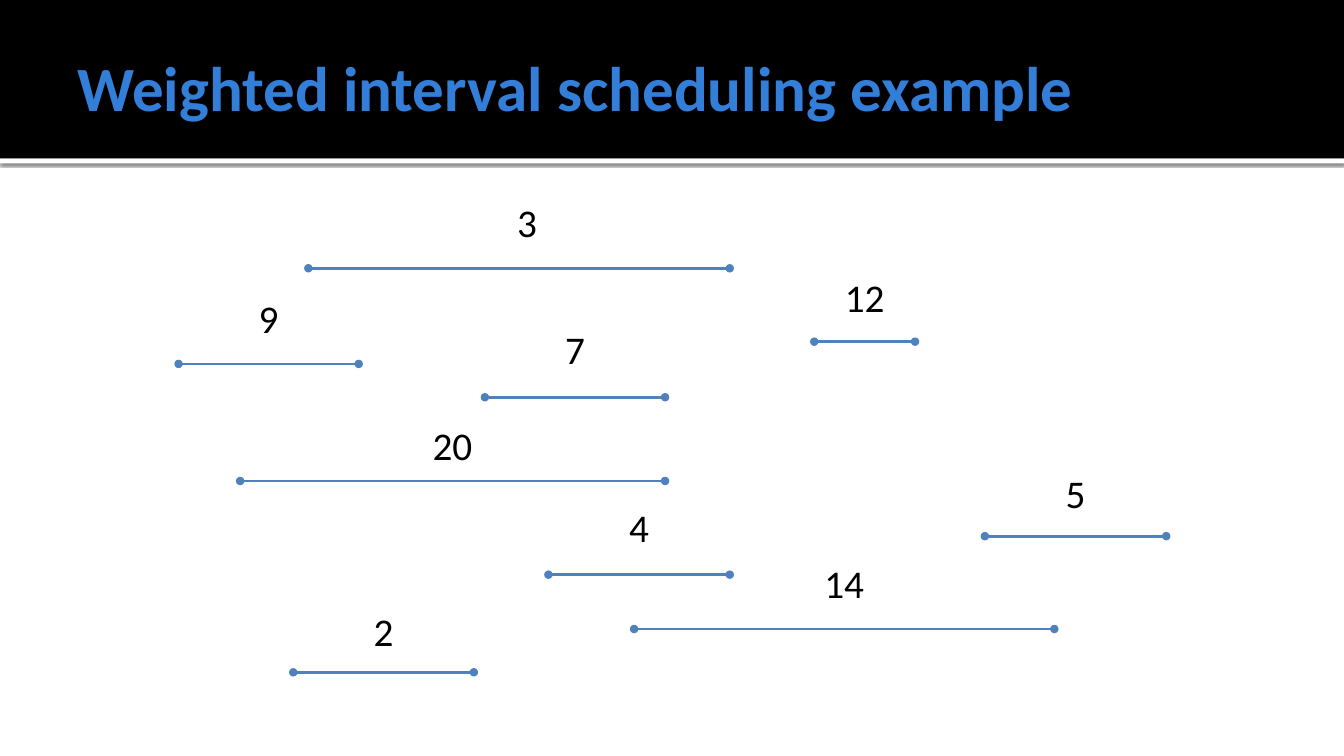
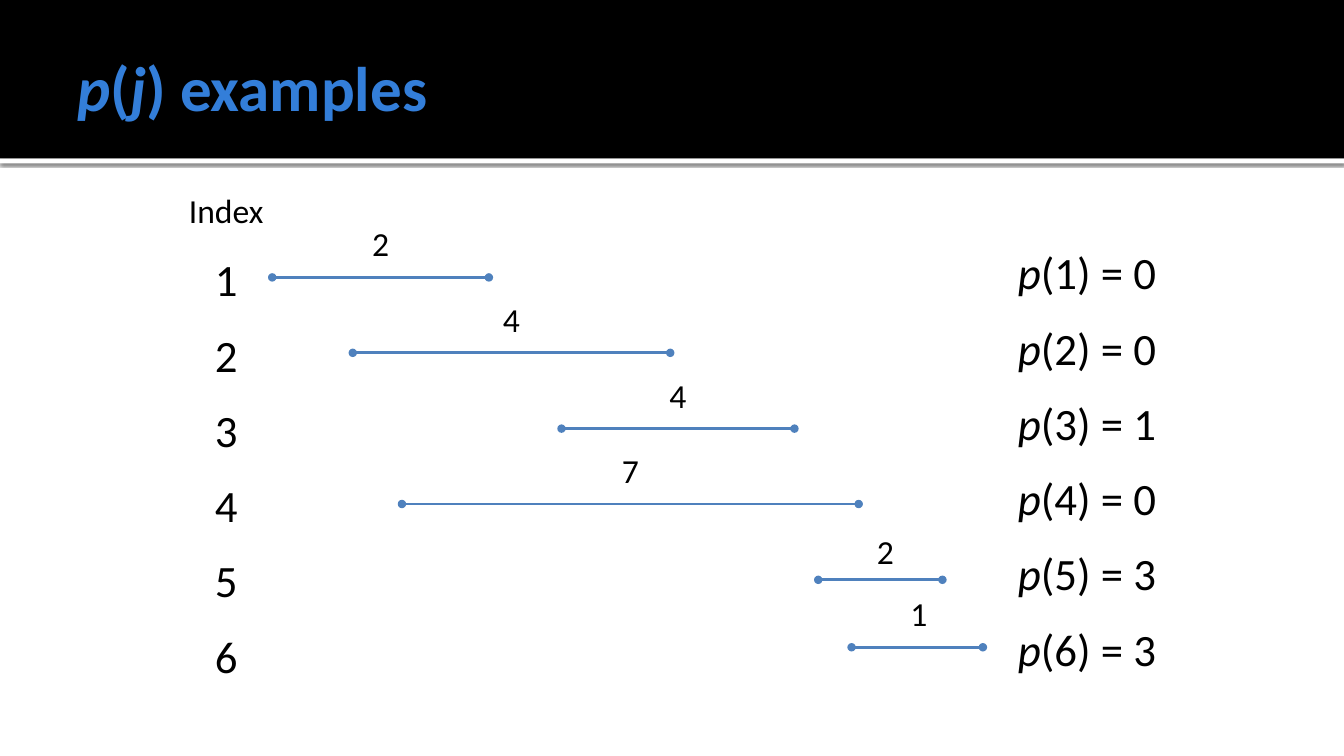
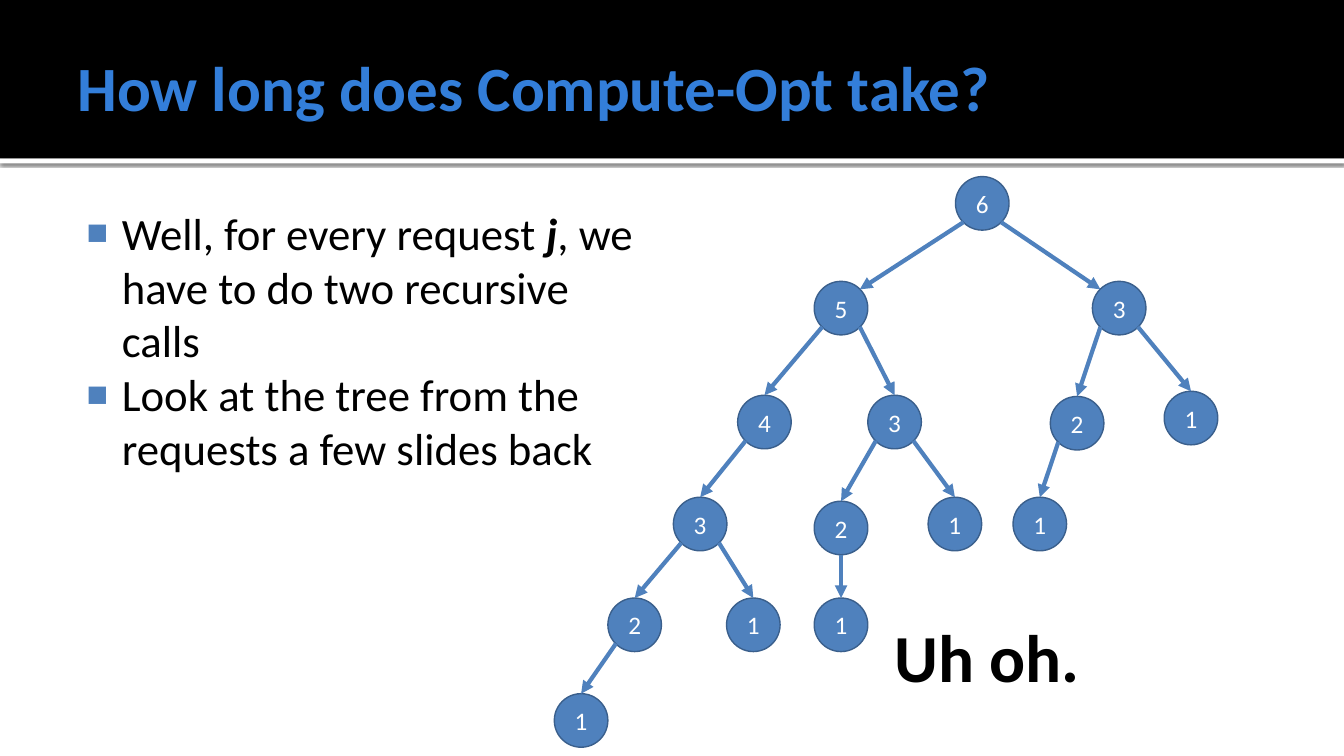
from dataclasses import dataclass

from lxml.etree import SubElement
from pptx import Presentation
from pptx.dml.color import RGBColor
from pptx.enum.shapes import MSO_CONNECTOR, MSO_SHAPE
from pptx.enum.text import MSO_ANCHOR, MSO_AUTO_SIZE, PP_ALIGN
from pptx.oxml.ns import qn
from pptx.util import Cm, Pt


@dataclass(frozen=True)
class Theme:
    font: str = "Calibri"
    black: str = "000000"
    white: str = "FFFFFF"
    title_blue: str = "337ED9"
    blue: str = "4F81BD"
    node_outline: str = "3A5F8C"
    title_size: int = 45
    remark_size: int = 48
    body_size: int = 32
    weight_size: int = 28
    small_size: int = 24
    node_size: int = 18
    interval_width: int = 2
    arrow_width: int = 3


@dataclass(frozen=True)
class Box:
    """A region in centimetres."""
    left: float
    top: float
    width: float
    height: float

    def lengths(self):
        return Cm(self.left), Cm(self.top), Cm(self.width), Cm(self.height)


@dataclass(frozen=True)
class Interval:
    """A weighted interval, in centimetres from its region's corner."""
    weight: str
    start: float
    end: float
    y: float
    rise: float
    shift: float = 0


@dataclass(frozen=True)
class Node:
    """A call in the recursion tree, in centimetres from the tree's corner."""
    label: str
    x: float
    y: float
    children: tuple = ()


THEME = Theme()
SLIDE_WIDTH, SLIDE_HEIGHT = 33.87, 19.05
BAND_HEIGHT = 3.99
TITLE_BOX = Box(1.7, 0.43, 30.48, 3.48)
NODE_DIAMETER = 1.35
FAR_CHILD = 3
TITLE_ONLY, TITLE_AND_BODY = 5, 1

# Connection sites of an ellipse, as fractions of its width and height
SITES = {0: (0.5, 0), 1: (0.15, 0.15), 3: (0.15, 0.85),
         4: (0.5, 1), 5: (0.85, 0.85), 7: (0.85, 0.15)}

WEIGHTED_INTERVALS = (
    Interval("9", 0, 4.54, 4.37, 1.88),
    Interval("4", 9.32, 13.89, 9.68, 1.91),
    Interval("7", 7.72, 12.26, 5.21, 1.93),
    Interval("5", 20.32, 24.89, 8.71, 1.8),
    Interval("12", 16.02, 18.56, 3.81, 1.85),
    Interval("20", 1.55, 12.26, 7.32, 1.63),
    Interval("2", 2.89, 7.44, 12.14, 1.75),
    Interval("3", 3.27, 13.89, 1.96, 1.88, 0.2),
    Interval("14", 11.48, 22.07, 11.05, 1.88),
)
INDEXED_INTERVALS = (
    Interval("2", 0, 5.46, 1.99, 1.49),
    Interval("4", 2.03, 10.03, 3.89, 1.49),
    Interval("4", 7.29, 13.16, 5.8, 1.49),
    Interval("7", 3.27, 14.78, 7.7, 1.49),
    Interval("2", 13.76, 16.89, 9.61, 1.35, 0.13),
    Interval("1", 14.6, 17.91, 11.31, 1.5, 0.04),
)
PREDECESSORS = (0, 0, 1, 0, 3, 3)

CALL_TREE = Node("6", 10.11, 0, (
    Node("5", 6.55, 2.64, (
        Node("4", 4.62, 5.51, (
            Node("3", 3, 8.08, (
                Node("2", 1.35, 10.62, (Node("1", 0, 13.03),)),
                Node("1", 4.34, 10.62))),)),
        Node("3", 7.9, 5.51, (
            Node("2", 6.55, 8.18, (Node("1", 6.55, 10.62),)),
            Node("1", 9.42, 8.08))))),
    Node("3", 13.56, 2.64, (
        Node("2", 12.5, 5.54, (Node("1", 11.56, 8.08),)),
        Node("1", 15.37, 5.41)))))


def rgb(color):
    return RGBColor.from_string(color)


def write_runs(paragraph, runs, size, color=THEME.black, bold=False):
    """Add (text, style) runs; a style holds b for bold and i for italic."""
    for text, style in runs:
        run = paragraph.add_run()
        run.text = text
        font = run.font
        font.name, font.size = THEME.font, Pt(size)
        font.bold, font.italic = bold or "b" in style, "i" in style
        font.color.rgb = rgb(color)


def add_text(shapes, box, lines, size, align=PP_ALIGN.CENTER, bold=False, spacing=None):
    frame = shapes.add_textbox(*box.lengths()).text_frame
    frame.word_wrap = True
    frame.auto_size = MSO_AUTO_SIZE.SHAPE_TO_FIT_TEXT
    for number, runs in enumerate(lines):
        paragraph = frame.add_paragraph() if number else frame.paragraphs[0]
        paragraph.alignment = align
        if spacing:
            paragraph.line_spacing = spacing
        write_runs(paragraph, runs, size, bold=bold)
    return frame


def add_filled_shape(shapes, kind, box, color):
    shape = shapes.add_shape(kind, *box.lengths())
    shape.shadow.inherit = False
    shape.fill.solid()
    shape.fill.fore_color.rgb = rgb(color)
    shape.line.fill.background()
    return shape


def add_line(shapes, start, end, width, **ends):
    """Draw a line between two points in cm; ends gives headEnd and tailEnd types."""
    connector = shapes.add_connector(
        MSO_CONNECTOR.STRAIGHT, *(Cm(value) for value in (*start, *end)))
    connector.line.color.rgb = rgb(THEME.blue)
    connector.line.width = Pt(width)
    outline = connector.line._get_or_add_ln()
    for name, kind in ends.items():
        SubElement(outline, qn(f"a:{name}"), type=kind)
    SubElement(connector.element.spPr, qn("a:effectLst"))
    return connector


def add_master_bands(presentation, slide):
    """Draw the title bands on a slide, then move them to the master."""
    strip = add_filled_shape(slide.shapes, MSO_SHAPE.RECTANGLE,
                             Box(0, BAND_HEIGHT, SLIDE_WIDTH, 0.13), THEME.white)
    shadow = SubElement(strip.element.spPr.find(qn("a:effectLst")), qn("a:outerShdw"),
                        blurRad=str(Pt(2.5)), dist=str(Pt(0.8)), dir="5400000",
                        algn="t", rotWithShape="0")
    color = SubElement(shadow, qn("a:srgbClr"), val=THEME.black)
    SubElement(color, qn("a:alpha"), val="60000")
    band = add_filled_shape(slide.shapes, MSO_SHAPE.RECTANGLE,
                            Box(0, 0, SLIDE_WIDTH, BAND_HEIGHT), THEME.black)
    master_tree = presentation.slide_master.shapes.element
    for number, shape in enumerate((strip, band)):
        shape.element.find(".//" + qn("p:cNvPr")).set("id", str(101 + number))
        master_tree.insert(2 + number, shape.element)


def place_placeholder(placeholder, box, insets):
    placeholder.left, placeholder.top, placeholder.width, placeholder.height = box.lengths()
    frame = placeholder.text_frame
    frame.auto_size = MSO_AUTO_SIZE.NONE
    frame.word_wrap = True
    (frame.margin_left, frame.margin_top,
     frame.margin_right, frame.margin_bottom) = (Cm(inset) for inset in insets)
    return frame


def add_titled_slide(presentation, layout, title_runs):
    slide = presentation.slides.add_slide(presentation.slide_layouts[layout])
    frame = place_placeholder(slide.shapes.title, TITLE_BOX, (0.25, 0.13, 0.13, 0.13))
    frame.vertical_anchor = MSO_ANCHOR.MIDDLE
    paragraph = frame.paragraphs[0]
    paragraph.alignment = PP_ALIGN.LEFT
    write_runs(paragraph, title_runs, THEME.title_size, THEME.title_blue, bold=True)
    return slide


def add_intervals(slide, box, intervals, label_width, label_height, size):
    shapes = slide.shapes.add_group_shape().shapes
    for interval in intervals:
        y = box.top + interval.y
        start, end = box.left + interval.start, box.left + interval.end
        add_line(shapes, (start, y), (end, y), THEME.interval_width,
                 headEnd="oval", tailEnd="oval")
        label_left = (start + end - label_width) / 2 + interval.shift
        label_box = Box(label_left, y - interval.rise, label_width, label_height)
        add_text(shapes, label_box, [[(interval.weight, "")]], size)


def add_index_column(slide, box, count):
    lines = [[(str(index), "")] for index in range(1, count + 1)]
    frame = add_text(slide.shapes, box, [[("Index", "")], *lines],
                     THEME.body_size, spacing=1.4)
    heading = frame.paragraphs[0]
    heading.line_spacing = 1.0
    heading.runs[0].font.size = Pt(THEME.small_size)


def add_predecessor_column(slide, box, predecessors):
    lines = [[("p", "i"), (f"({index}) = {value}", "")]
             for index, value in enumerate(predecessors, 1)]
    add_text(slide.shapes, box, lines, THEME.body_size, PP_ALIGN.LEFT, spacing=1.4)


def add_bullets(slide, box, items):
    frame = place_placeholder(slide.placeholders[1], box, (0.15, 0.25, 0.25, 0.13))
    for number, runs in enumerate(items):
        paragraph = frame.add_paragraph() if number else frame.paragraphs[0]
        paragraph.space_before = Pt(0)
        properties = paragraph._p.get_or_add_pPr()
        properties.set("marL", str(Cm(1.22)))
        properties.set("indent", str(-Cm(0.89)))
        color = SubElement(properties, qn("a:buClr"))
        SubElement(color, qn("a:srgbClr"), val=THEME.blue)
        SubElement(properties, qn("a:buSzPct"), val="80000")
        SubElement(properties, qn("a:buChar"), char="■")
        write_runs(paragraph, runs, THEME.body_size)


def add_call_arrow(shapes, box, parent, child, parent_shape, child_shape):
    """Join two nodes; a far child is met at the corner that faces its parent."""
    offset = child.x - parent.x
    begin_site = 4 if offset == 0 else 3 if offset < 0 else 5
    end_site = 0 if abs(offset) < FAR_CHILD else 7 if offset < 0 else 1

    def site_point(node, site):
        across, down = SITES[site]
        return (box.left + node.x + across * NODE_DIAMETER,
                box.top + node.y + down * NODE_DIAMETER)

    connector = add_line(shapes, site_point(parent, begin_site),
                         site_point(child, end_site), THEME.arrow_width, tailEnd="triangle")
    glue = connector.element.find(".//" + qn("p:cNvCxnSpPr"))
    for name, shape, site in (("a:stCxn", parent_shape, begin_site),
                              ("a:endCxn", child_shape, end_site)):
        SubElement(glue, qn(name), id=str(shape.shape_id), idx=str(site))


def add_call_tree(shapes, box, node):
    """Draw a node and all calls below it, and return the node's shape."""
    circle = add_filled_shape(
        shapes, MSO_SHAPE.OVAL,
        Box(box.left + node.x, box.top + node.y, NODE_DIAMETER, NODE_DIAMETER), THEME.blue)
    circle.line.color.rgb = rgb(THEME.node_outline)
    circle.line.width = Pt(1)
    circle.text_frame.vertical_anchor = MSO_ANCHOR.MIDDLE
    paragraph = circle.text_frame.paragraphs[0]
    paragraph.alignment = PP_ALIGN.CENTER
    write_runs(paragraph, [(node.label, "")], THEME.node_size, THEME.white)
    for child in node.children:
        child_circle = add_call_tree(shapes, box, child)
        add_call_arrow(shapes, box, node, child, circle, child_circle)
    return circle


def build_weighted_example(presentation):
    slide = add_titled_slide(presentation, TITLE_ONLY,
                             [("Weighted interval scheduling example", "")])
    add_intervals(slide, Box(4.5, 4.8, 24.9, 12.2), WEIGHTED_INTERVALS,
                  2.13, 1.45, THEME.weight_size)
    return slide


def build_predecessor_examples(presentation):
    slide = add_titled_slide(presentation, TITLE_ONLY,
                             [("p", "i"), ("(", ""), ("j", "i"), (") examples", "")])
    add_intervals(slide, Box(6.86, 5, 17.91, 11.4), INDEXED_INTERVALS,
                  1.7, 1.27, THEME.small_size)
    add_index_column(slide, Box(4.01, 4.67, 3.38, 12.6), len(PREDECESSORS))
    add_predecessor_column(slide, Box(25.4, 5.51, 4.45, 11.73), PREDECESSORS)


def build_running_time(presentation):
    slide = add_titled_slide(presentation, TITLE_AND_BODY,
                             [("How long does Compute-Opt take?", "")])
    add_bullets(slide, Box(1.7, 4.93, 14.5, 12.85), [
        [("Well, for every request ", ""), ("j", "bi"),
         (", we have to do two recursive calls", "")],
        [("Look at the tree from the requests a few slides back", "")],
    ])
    add_call_tree(slide.shapes.add_group_shape().shapes,
                  Box(13.97, 4.45, 16.72, 14.38), CALL_TREE)
    add_text(slide.shapes, Box(22.1, 15.37, 5.56, 2.31), [[("Uh oh.", "")]],
             THEME.remark_size, bold=True)


def main():
    presentation = Presentation()
    presentation.slide_width, presentation.slide_height = Cm(SLIDE_WIDTH), Cm(SLIDE_HEIGHT)
    first_slide = build_weighted_example(presentation)
    add_master_bands(presentation, first_slide)
    build_predecessor_examples(presentation)
    build_running_time(presentation)
    presentation.save("out.pptx")


if __name__ == "__main__":
    main()
